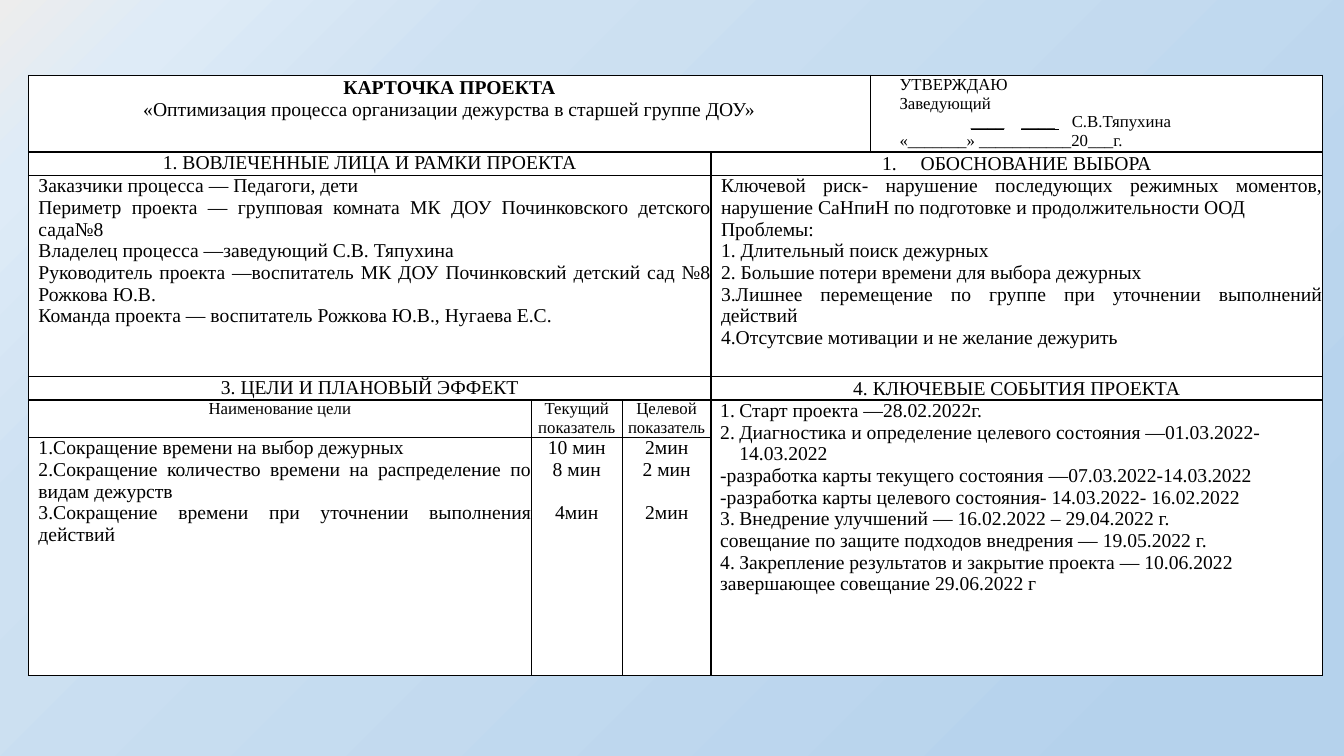
from dataclasses import dataclass

from lxml import etree
from pptx import Presentation
from pptx import util as u
from pptx.dml import color
from pptx.enum import text
from pptx.oxml import ns

FONT = "Times New Roman"
COLORS = {"ink": "000000", "paper": "FFFFFF"}
BACKGROUND_STOPS = {0: "EDEDED", 9: "DEEBF7", 25: "CEE1F2", 91: "B5D2EC"}
COLUMNS = (12.67, 2.29, 2.24, 4.01, 11.4)
ROWS = (1.93, 0.58, 5.08, 0.58, 0.93, 6)

LEFT = text.PP_ALIGN.LEFT
CENTER = text.PP_ALIGN.CENTER
JUSTIFY = text.PP_ALIGN.JUSTIFY


@dataclass(frozen=True)
class Style:
    align: text.PP_ALIGN = CENTER
    size: int = 14
    bold: bool = False
    margin: float = 0
    hanging: float = 0
    spacing: float = 1
    before: float = 0
    numbered: bool = False
    tabs: tuple[float, ...] = ()


@dataclass(frozen=True)
class Line:
    spans: tuple[str, ...]
    style: Style
    underlined: int = -1  # index of the underlined span


@dataclass(frozen=True)
class Block:
    row: int
    column: int
    lines: list[Line]
    last_row: int
    last_column: int


HEADING = Style()
SPACED = Style(spacing=1.07)
TITLE = Style(bold=True, spacing=1.07)
NUMBERED = Style(margin=0.97, hanging=0.97, spacing=1.07, numbered=True)
LABEL = Style(size=12)
BODY = Style(JUSTIFY, margin=0.25)
APPROVAL = Style(LEFT, 12, margin=0.74)
SIGNATURE = Style(LEFT, 12, tabs=(0.74, 1.17, 3.38, 4.57))
EVENT = Style(LEFT, margin=0.71, hanging=0.48)
AFTER_GAP = Style(before=15.5)


def lines(style: Style, *texts: str) -> list[Line]:
    return [Line((words,), style) for words in texts]


def block(row: int, column: int, content: list[Line],
          last_column: int = 0, last_row: int = 0) -> Block:
    return Block(row, column, content, max(row, last_row), max(column, last_column))


BLOCKS = [
    # Card title and approval
    block(0, 0, lines(TITLE, "КАРТОЧКА ПРОЕКТА")
          + lines(HEADING, "«Оптимизация процесса организации дежурства в старшей группе ДОУ»"), 3),
    block(0, 4, lines(APPROVAL, "УТВЕРЖДАЮ", "Заведующий")
          + [Line(("\t", "\t____\t____ ", "\tС.В.Тяпухина"), SIGNATURE, underlined=1)]
          + lines(APPROVAL, "«_______» ___________20___г.")),
    # People and reasons
    block(1, 0, lines(HEADING, "1. ВОВЛЕЧЕННЫЕ ЛИЦА И РАМКИ ПРОЕКТА"), 2),
    block(1, 3, lines(NUMBERED, "ОБОСНОВАНИЕ ВЫБОРА"), 4),
    block(2, 0, lines(
        BODY,
        "Заказчики процесса — Педагоги, дети",
        "Периметр проекта — групповая комната МК ДОУ Починковского детского сада№8",
        "Владелец процесса —заведующий С.В. Тяпухина",
        "Руководитель проекта —воспитатель МК ДОУ Починковский детский сад №8 Рожкова Ю.В.",
        "Команда проекта — воспитатель Рожкова Ю.В., Нугаева Е.С."), 2),
    block(2, 3, lines(
        BODY,
        "Ключевой риск- нарушение последующих режимных моментов, "
        "нарушение СаНпиН по подготовке и продолжительности ООД",
        "Проблемы:",
        "1. Длительный поиск дежурных",
        "2. Большие потери времени для выбора дежурных",
        "3.Лишнее перемещение по группе при уточнении выполнений действий",
        "4.Отсутсвие мотивации и не желание дежурить"), 4),
    # Goals and key events
    block(3, 0, lines(HEADING, "3. ЦЕЛИ И ПЛАНОВЫЙ ЭФФЕКТ"), 2),
    block(3, 3, lines(SPACED, "4. КЛЮЧЕВЫЕ СОБЫТИЯ ПРОЕКТА"), 4),
    block(4, 0, lines(LABEL, "Наименование цели")),
    block(4, 1, lines(LABEL, "Текущий показатель")),
    block(4, 2, lines(LABEL, "Целевой показатель")),
    block(4, 3, lines(
        EVENT,
        "1.\tСтарт проекта —28.02.2022г.",
        "2.\tДиагностика и определение целевого состояния —01.03.2022-14.03.2022",
        "-разработка карты текущего состояния —07.03.2022-14.03.2022",
        "-разработка карты целевого состояния- 14.03.2022- 16.02.2022",
        "3.\tВнедрение улучшений — 16.02.2022 – 29.04.2022 г.",
        "совещание по защите подходов внедрения — 19.05.2022 г.",
        "4.\tЗакрепление результатов и закрытие проекта — 10.06.2022",
        "завершающее совещание 29.06.2022 г"), 4, 5),
    block(5, 0, lines(
        BODY,
        "1.Сокращение времени на выбор дежурных",
        "2.Сокращение количество времени на распределение по видам дежурств",
        "3.Сокращение времени при уточнении выполнения действий")),
    block(5, 1, lines(HEADING, "10 мин", "8 мин") + lines(AFTER_GAP, "4мин")),
    block(5, 2, lines(HEADING, "2мин", "2 мин") + lines(AFTER_GAP, "2мин")),
]


def add_element(parent, tag: str, **attributes):
    return etree.SubElement(parent, ns.qn(tag), {k: str(v) for k, v in attributes.items()})


def paint_background(page) -> None:
    fill = page.background.fill
    fill.gradient()
    fill.gradient_angle = 315  # counter-clockwise, towards the lower right
    stops = page.background._cSld.find(".//" + ns.qn("a:gsLst"))
    for stop in list(stops):
        stops.remove(stop)
    for place, shade in BACKGROUND_STOPS.items():
        add_element(add_element(stops, "a:gs", pos=place * 1000), "a:srgbClr", val=shade)


def format_cell(cell) -> None:
    cell.margin_left = cell.margin_right = cell.margin_top = cell.margin_bottom = 0
    properties = cell._tc.get_or_add_tcPr()
    for side in ("a:lnL", "a:lnR", "a:lnT", "a:lnB"):
        border = add_element(properties, side, w=u.Pt(1))
        add_element(add_element(border, "a:solidFill"), "a:srgbClr", val=COLORS["ink"])
    cell.fill.solid()
    cell.fill.fore_color.rgb = color.RGBColor.from_string(COLORS["paper"])
    cell.text_frame.paragraphs[0].font.size = u.Pt(12)


def write_line(para, line: Line) -> None:
    style = line.style
    properties = para._p.get_or_add_pPr()
    for child in list(properties):
        properties.remove(child)
    properties.set("marL", str(u.Cm(style.margin)))
    properties.set("indent", str(-u.Cm(style.hanging)))
    if style.numbered:
        add_element(properties, "a:buFont", typeface="+mj-lt")
        add_element(properties, "a:buAutoNum", type="arabicPeriod")
    if style.tabs:
        stops = add_element(properties, "a:tabLst")
        for place in style.tabs:
            add_element(stops, "a:tab", pos=u.Cm(place), algn="l")
    para.alignment = style.align
    para.line_spacing = style.spacing
    if style.before:
        para.space_before = u.Pt(style.before)
    para.font.name = FONT
    para.font.size = u.Pt(style.size)
    para.font.bold = style.bold
    para.font.color.rgb = color.RGBColor.from_string(COLORS["ink"])
    for index, words in enumerate(line.spans):
        span = para.add_run()
        span.text = words
        if index == line.underlined:
            span.font.underline = True


def fill_block(table, part: Block) -> None:
    cell = table.cell(part.row, part.column)
    if (part.last_row, part.last_column) != (part.row, part.column):
        cell.merge(table.cell(part.last_row, part.last_column))
    frame = cell.text_frame
    for index, line in enumerate(part.lines):
        write_line(frame.add_paragraph() if index else frame.paragraphs[0], line)


def main() -> None:
    deck = Presentation()
    deck.slide_width, deck.slide_height = u.Cm(33.87), u.Cm(19.05)
    page = deck.slides.add_slide(deck.slide_layouts[6])
    paint_background(page)

    # Project card
    table = page.shapes.add_table(len(ROWS), len(COLUMNS), u.Cm(0.72), u.Cm(1.9),
                                  u.Cm(sum(COLUMNS)), u.Cm(sum(ROWS))).table
    table.first_row = table.horz_banding = False
    for column, width in zip(table.columns, COLUMNS):
        column.width = u.Cm(width)
    for row, height in zip(table.rows, ROWS):
        row.height = u.Cm(height)
    for cell in table.iter_cells():
        format_cell(cell)
    for part in BLOCKS:
        fill_block(table, part)
    deck.save("out.pptx")


if __name__ == "__main__":
    main()
